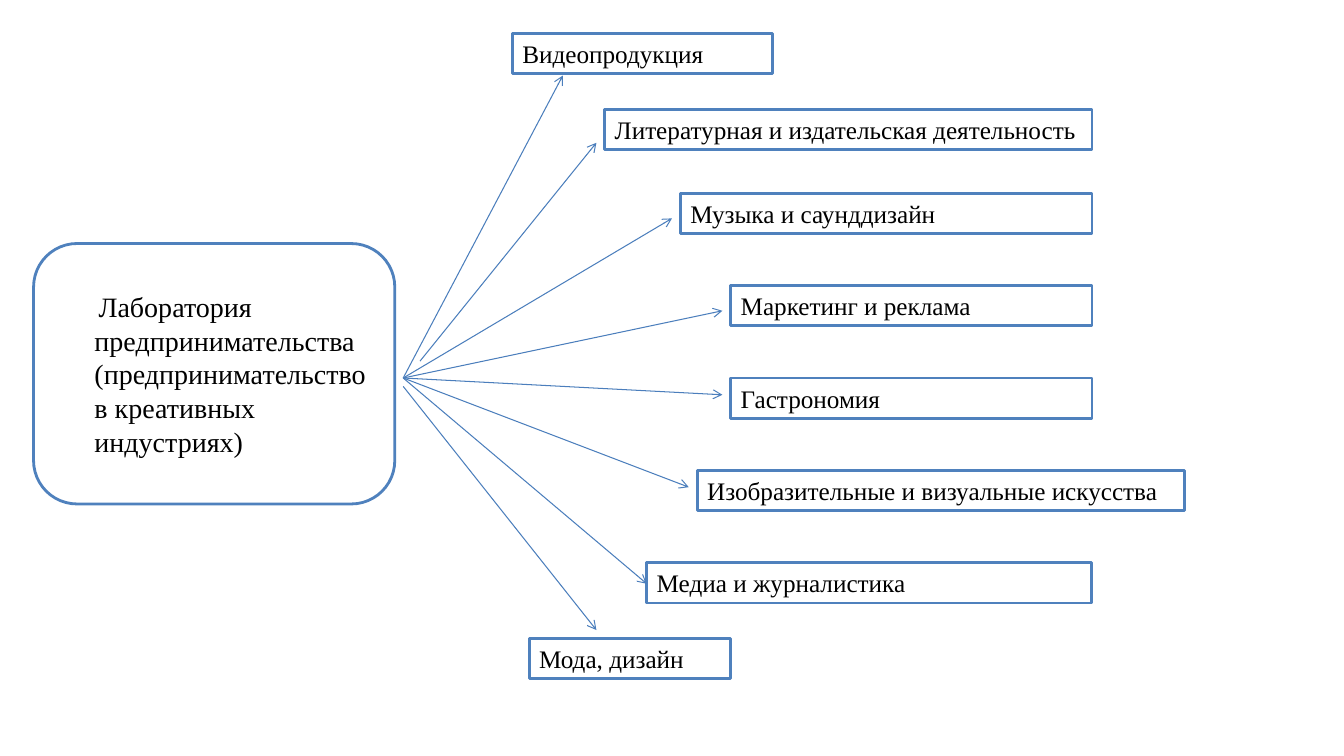
from lxml.etree import SubElement
from pptx import Presentation
from pptx.dml.color import RGBColor
from pptx.enum.shapes import MSO_CONNECTOR, MSO_SHAPE
from pptx.enum.text import MSO_ANCHOR, PP_ALIGN
from pptx.oxml.ns import qn
from pptx.util import Inches, Pt

COLS, ROWS = 160, 90
UNIT = Inches(1) // 12
HIGH = 4.8

HUB = "Лаборатория предпринимательства (предпринимательство в креативных индустриях)"

FIELDS = [
    ("Видеопродукция", 61, 4, 31, (48, 45), (67, 9)),
    ("Литературная и издательская деятельность", 72, 13, 58, (50, 43), (71, 17)),
    ("Музыка и саунддизайн", 81, 23, 49, (48, 45), (80, 26)),
    ("Маркетинг и реклама", 87, 34, 43, (48, 45), (86, 37)),
    ("Гастрономия", 87, 45, 43, (48, 45), (86, 47)),
    ("Изобразительные и визуальные искусства", 83, 56, 58, (48, 45), (82, 58)),
    ("Медиа и журналистика", 77, 67, 53, (48, 45), (77, 69.5)),
    ("Мода, дизайн", 63, 76, 24, (48, 46), (71, 75)),
]


def grid(*cells):
    return [int(cell * UNIT) for cell in cells]


def paint(color, code):
    color.rgb = RGBColor.from_string(code)


def add_box(slide, kind, area, text, size, anchor):
    box = slide.shapes.add_shape(kind, *grid(*area))
    box.shadow.inherit = False
    box.fill.solid()
    paint(box.fill.fore_color, "FFFFFF")
    paint(box.line.color, "4F81BD")
    box.line.width = Pt(2)
    frame = box.text_frame
    frame.word_wrap = True
    frame.vertical_anchor = anchor
    frame.text = text
    para = frame.paragraphs[0]
    para.alignment = PP_ALIGN.LEFT
    font = para.runs[0].font
    font.name = "Times New Roman"
    font.size = Pt(size)
    paint(font.color, "000000")
    return para


def add_hub(slide):
    para = add_box(slide, MSO_SHAPE.ROUNDED_RECTANGLE, (4, 29, 43, 31),
                   HUB, 20, MSO_ANCHOR.MIDDLE)
    props = para._p.get_or_add_pPr()
    props.set("marL", str(Inches(0.38)))
    props.set("indent", str(Inches(0.04)))


def add_arrow(slide, start, end):
    arrow = slide.shapes.add_connector(MSO_CONNECTOR.STRAIGHT, *grid(*start, *end))
    paint(arrow.line.color, "4B7EBC")
    arrow.line.width = Pt(0.75)
    SubElement(arrow.line._get_or_add_ln(), qn("a:tailEnd"), type="arrow")
    SubElement(arrow._element.spPr, qn("a:effectLst"))


def main():
    deck = Presentation()
    deck.slide_width, deck.slide_height = grid(COLS, ROWS)
    slide = deck.slides.add_slide(deck.slide_layouts[6])
    add_hub(slide)
    for text, left, top, width, start, end in FIELDS:
        add_box(slide, MSO_SHAPE.RECTANGLE, (left, top, width, HIGH),
                text, 18, MSO_ANCHOR.TOP)
        add_arrow(slide, start, end)
    deck.save("out.pptx")


if __name__ == "__main__":
    main()
